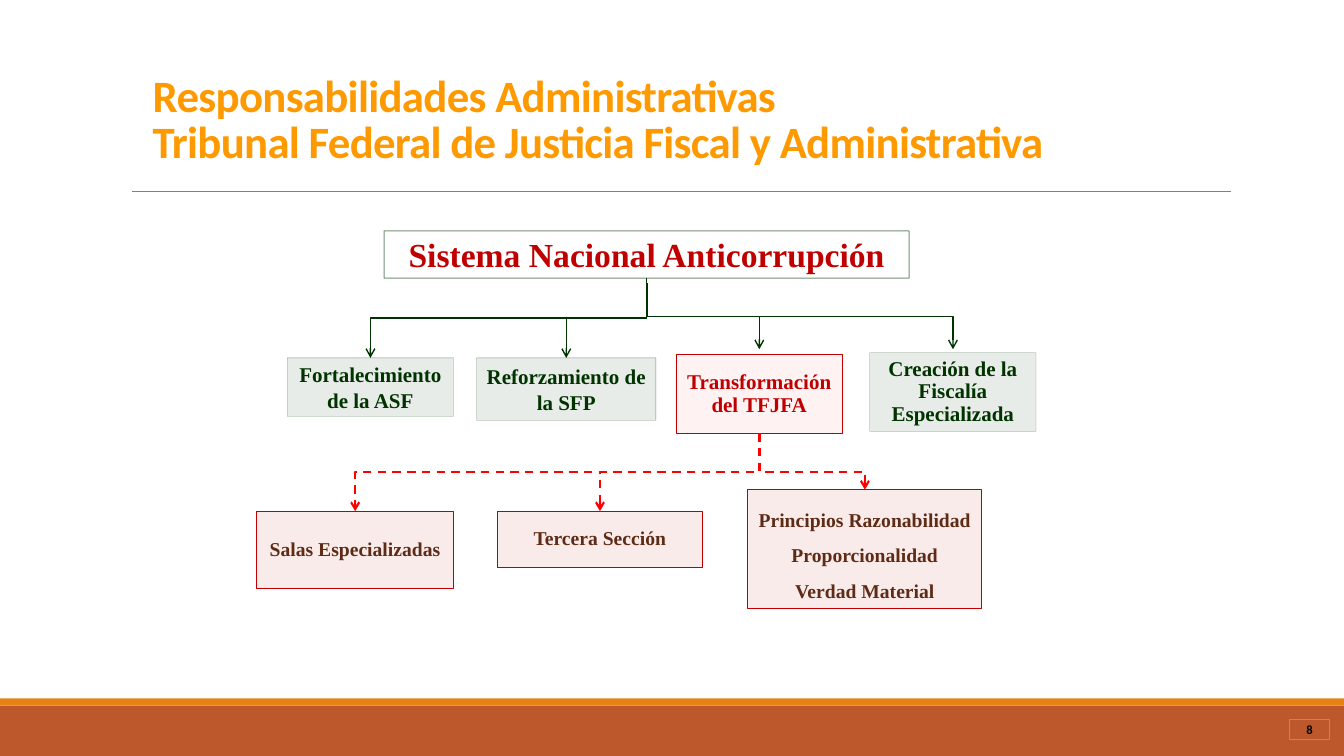
from lxml import etree
from pptx import Presentation
from pptx.dml.color import RGBColor
from pptx.enum.dml import MSO_LINE
from pptx.enum.shapes import MSO_CONNECTOR, MSO_SHAPE
from pptx.enum.text import MSO_ANCHOR, PP_ALIGN
from pptx.oxml.ns import qn
from pptx.util import Cm, Pt

RECTANGLE = MSO_SHAPE.RECTANGLE
STRAIGHT, ELBOW = MSO_CONNECTOR.STRAIGHT, MSO_CONNECTOR.ELBOW
DASH = MSO_LINE.DASH
MIDDLE, BOTTOM = MSO_ANCHOR.MIDDLE, MSO_ANCHOR.BOTTOM
LEFT, CENTER = PP_ALIGN.LEFT, PP_ALIGN.CENTER

GREEN, RED, BRIGHT_RED, BROWN = "003300", "C00000", "FF0000", "5E2C16"
ORANGE, RUST, GOLD, GRAY, BLACK = "E48312", "BD582C", "FF9900", "808080", "000000"
SERIF, SANS = "Times New Roman", "Calibri"


def color(hex_value):
    return RGBColor.from_string(hex_value)


def set_alpha(element, percent):
    """Set the opacity of the solid fill inside an element."""
    if percent < 100:
        tint = element.find(qn("a:solidFill")).find(qn("a:srgbClr"))
        etree.SubElement(tint, qn("a:alpha")).set("val", str(percent * 1000))


class SlideBuilder:
    def __init__(self, slide):
        self.slide = slide
        self.margin = Cm(0.03)

    def outline(self, line, hex_value, width, alpha=100):
        line.color.rgb = color(hex_value)
        line.width = Pt(width)
        set_alpha(line._ln, alpha)

    def text(self, shape, text, size, hex_value, font=SERIF, spacing=1.0,
             align=CENTER, anchor=MIDDLE, margin=None, tracking=0):
        frame = shape.text_frame
        frame.word_wrap = True
        frame.vertical_anchor = anchor
        if margin is not None:
            for side in ("left", "right", "top", "bottom"):
                setattr(frame, f"margin_{side}", margin)
        frame.text = text
        paragraph = frame.paragraphs[0]
        paragraph.alignment = align
        paragraph.line_spacing = spacing
        style = {"name": font, "size": Pt(size), "bold": True}
        for run in paragraph.runs:
            for name, value in style.items():
                setattr(run.font, name, value)
            run.font.color.rgb = color(hex_value)
            if tracking:
                run._r.get_or_add_rPr().set("spc", str(tracking))

    def box(self, bounds, fill=None, fill_alpha=100, line=None):
        shape = self.slide.shapes.add_shape(RECTANGLE, *map(Cm, bounds))
        shape.shadow.inherit = False
        if fill:
            shape.fill.solid()
            shape.fill.fore_color.rgb = color(fill)
            set_alpha(shape._element.spPr, fill_alpha)
        else:
            shape.fill.background()
        if line:
            self.outline(shape.line, *line)
        else:
            shape.line.fill.background()
        return shape

    def node(self, bounds, text, size, text_color, spacing=1.0, **look):
        shape = self.box(bounds, **look)
        self.text(shape, text, size, text_color, spacing=spacing, margin=self.margin)

    def title(self, bounds, text):
        shape = self.slide.shapes.add_textbox(*map(Cm, bounds))
        self.text(shape, text, 32, GOLD, SANS, 0.85, LEFT, BOTTOM, tracking=-50)

    def connector(self, kind, start, end, hex_value, width):
        connector = self.slide.shapes.add_connector(kind, *map(Cm, start + end))
        self.outline(connector.line, hex_value, width)
        etree.SubElement(connector._element.spPr, qn("a:effectLst"))
        return connector

    def branch(self, start, end, hex_value, width, dash=None, bend=0.5):
        """Elbow arrow that leaves downwards: a box turned by a quarter."""
        (x1, y1), (x2, y2) = start, end
        middle_x, middle_y = (x1 + x2) / 2, (y1 + y2) / 2
        half_drop, half_span = (y2 - y1) / 2, abs(x2 - x1) / 2
        to_right = x2 > x1
        reach = -half_drop if to_right else half_drop
        connector = self.connector(
            ELBOW, (middle_x - reach, middle_y - half_span),
            (middle_x + reach, middle_y + half_span), hex_value, width)
        properties = connector._element.spPr
        properties.find(qn("a:xfrm")).set("rot", "16200000" if to_right else "5400000")
        geometry = properties.find(qn("a:prstGeom"))
        guides = geometry.find(qn("a:avLst"))
        if guides is None:
            guides = etree.SubElement(geometry, qn("a:avLst"))
        guide = etree.SubElement(guides, qn("a:gd"))
        guide.set("name", "adj1")
        guide.set("fmla", f"val {round(bend * 100000)}")
        if dash:
            connector.line.dash_style = dash
        etree.SubElement(connector.line._ln, qn("a:tailEnd")).set("type", "arrow")


def main():
    presentation = Presentation()
    presentation.slide_width, presentation.slide_height = Cm(33.87), Cm(19.05)
    builder = SlideBuilder(presentation.slides.add_slide(presentation.slide_layouts[6]))

    # Footer bands and title rule
    builder.box((0, 17.78, 33.87, 1.27), fill=RUST)
    builder.box((0, 17.6, 33.87, 0.18), fill=ORANGE)
    builder.connector(STRAIGHT, (3.33, 4.83), (31.01, 4.83), GRAY, 0.5)

    # Title
    builder.title((3.6, 1.55, 27.38, 2.8),
                  "Responsabilidades Administrativas\v"
                  "Tribunal Federal de Justicia Fiscal y Administrativa")

    # Top of the chart
    builder.node((9.68, 5.82, 13.23, 1.19), "Sistema Nacional Anticorrupción",
                 24, RED, line=(GREEN, 0.75, 54))

    # Second level: four measures
    green_look = {"fill": GREEN, "fill_alpha": 9, "line": (GREEN, 0.25, 50)}
    focus_look = {"fill": BRIGHT_RED, "fill_alpha": 5, "line": (RED, 0.75)}
    measures = [
        ((7.24, 9.02, 4.19, 1.47), "Fortalecimiento de la ASF", GREEN, 1.0, green_look),
        ((12.01, 9.02, 4.52, 1.57), "Reforzamiento de la SFP", GREEN, 1.0, green_look),
        ((17.04, 8.94, 4.19, 1.98), "Transformación del TFJFA", RED, 0.9, focus_look),
        ((21.92, 8.89, 4.19, 1.98), "Creación de la Fiscalía Especializada",
         GREEN, 0.9, green_look),
    ]
    root_x = 16.3
    for bounds, text, text_color, spacing, look in measures:
        builder.node(bounds, text, 15, text_color, spacing, **look)
        target_x = bounds[0] + bounds[2] / 2
        start_y, end_y = (7.01, 9.02) if target_x < root_x else (7.14, 8.8)
        builder.branch((root_x, start_y), (target_x, end_y), GREEN, 1)

    # Third level: changes to the court
    changes = [
        ((6.46, 12.88, 4.98, 1.96), "Salas Especializadas", 0.9, 0.5),
        ((12.53, 12.88, 5.18, 1.42), "Tercera Sección", 0.9, 0.5),
        ((18.85, 12.34, 5.89, 3), "Principios Razonabilidad\vProporcionalidad\v"
         "Verdad Material", 1.5, 0.68),
    ]
    for bounds, text, spacing, bend in changes:
        builder.node(bounds, text, 14, BROWN, spacing,
                     fill=RED, fill_alpha=8, line=(RED, 0.75))
        target = (bounds[0] + bounds[2] / 2, bounds[1])
        builder.branch((19.14, 10.92), target, BRIGHT_RED, 1.5, DASH, bend)

    # Page number
    page = builder.box((32.5, 18.12, 1, 0.52), line=(ORANGE, 0.75))
    builder.text(page, "8", 9, BLACK, SANS)

    presentation.save("out.pptx")


if __name__ == "__main__":
    main()
